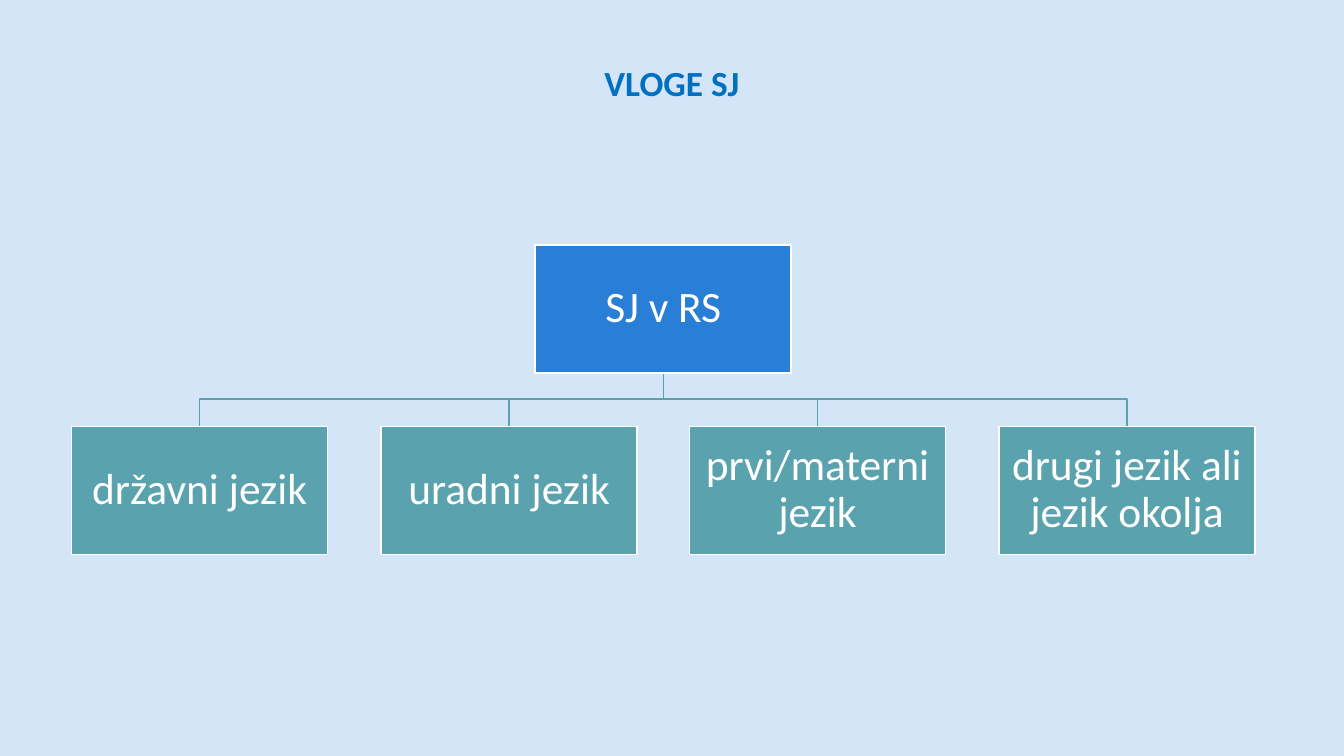
from dataclasses import dataclass

from pptx import Presentation
from pptx.dml.color import RGBColor
from pptx.enum.shapes import MSO_SHAPE
from pptx.enum.text import MSO_ANCHOR, PP_ALIGN
from pptx.util import Emu, Pt

PX = 9144  # 100 px to the inch
FONT = "Calibri"
BACKGROUND = RGBColor(0xD4, 0xE5, 0xF7)
TITLE_BLUE = RGBColor(0x00, 0x70, 0xC0)
ROOT_BLUE = RGBColor(0x29, 0x7F, 0xD5)
ROLE_TEAL = RGBColor(0x5A, 0xA2, 0xAE)
WHITE = RGBColor(0xFF, 0xFF, 0xFF)

NODE_WIDTH, NODE_HEIGHT = 254, 127
ROOT_LEFT, ROOT_TOP = 531, 243
ROLE_FIRST_LEFT, ROLE_LAST_LEFT, ROLE_TOP = 71, 991, 423
ROLES = [
    "državni jezik",
    "uradni jezik",
    "prvi/materni jezik",
    "drugi jezik ali jezik okolja",
]


@dataclass
class Node:
    text: str
    left: int
    top: int
    color: RGBColor

    @property
    def center(self) -> int:
        return self.left + NODE_WIDTH // 2

    @property
    def bottom(self) -> int:
        return self.top + NODE_HEIGHT


def px(value: int) -> Emu:
    return Emu(value * PX)


def write_text(box, text: str, *, size: float, color: RGBColor,
               inset: int, bold: bool = False) -> None:
    frame = box.text_frame
    frame.word_wrap = True
    frame.vertical_anchor = MSO_ANCHOR.MIDDLE
    frame.margin_left = frame.margin_right = px(inset)
    frame.margin_top = frame.margin_bottom = px(inset)
    para = frame.paragraphs[0]
    para.alignment = PP_ALIGN.CENTER
    para.line_spacing = 0.9
    span = para.add_run()
    span.text = text
    span.font.name = FONT
    span.font.size = Pt(size)
    span.font.bold = bold
    span.font.color.rgb = color


def draw_node(page, node: Node) -> None:
    box = page.shapes.add_shape(MSO_SHAPE.RECTANGLE, px(node.left), px(node.top),
                                px(NODE_WIDTH), px(NODE_HEIGHT))
    box.shadow.inherit = False
    box.fill.solid()
    box.fill.fore_color.rgb = node.color
    box.line.color.rgb = WHITE
    box.line.width = Pt(1)
    write_text(box, node.text, size=31, color=WHITE, inset=2)


def draw_branch(page, parent: Node, child: Node) -> None:
    """Draw an elbow line from the parent's bottom to the child's top."""
    middle = (parent.bottom + child.top) // 2
    builder = page.shapes.build_freeform(parent.center, parent.bottom, scale=PX)
    builder.add_line_segments([(parent.center, middle), (child.center, middle),
                               (child.center, child.top)], close=False)
    branch = builder.convert_to_shape()
    branch.shadow.inherit = False
    branch.fill.background()
    branch.line.color.rgb = ROLE_TEAL
    branch.line.width = Pt(1)


def main() -> None:
    deck = Presentation()
    deck.slide_width, deck.slide_height = Emu(12192000), px(750)
    page = deck.slides.add_slide(deck.slide_layouts[6])
    page.background.fill.solid()
    page.background.fill.fore_color.rgb = BACKGROUND

    title = page.shapes.add_textbox(px(244), px(44), px(845), px(81))
    write_text(title, "VLOGE SJ", size=25.2, color=TITLE_BLUE, inset=20, bold=True)

    root = Node("SJ v RS", ROOT_LEFT, ROOT_TOP, ROOT_BLUE)
    pitch = (ROLE_LAST_LEFT - ROLE_FIRST_LEFT) / (len(ROLES) - 1)
    roles = [Node(text, ROLE_FIRST_LEFT + round(index * pitch), ROLE_TOP, ROLE_TEAL)
             for index, text in enumerate(ROLES)]
    for role in roles:
        draw_branch(page, root, role)
    for node in [root, *roles]:
        draw_node(page, node)

    deck.save("out.pptx")


if __name__ == "__main__":
    main()
